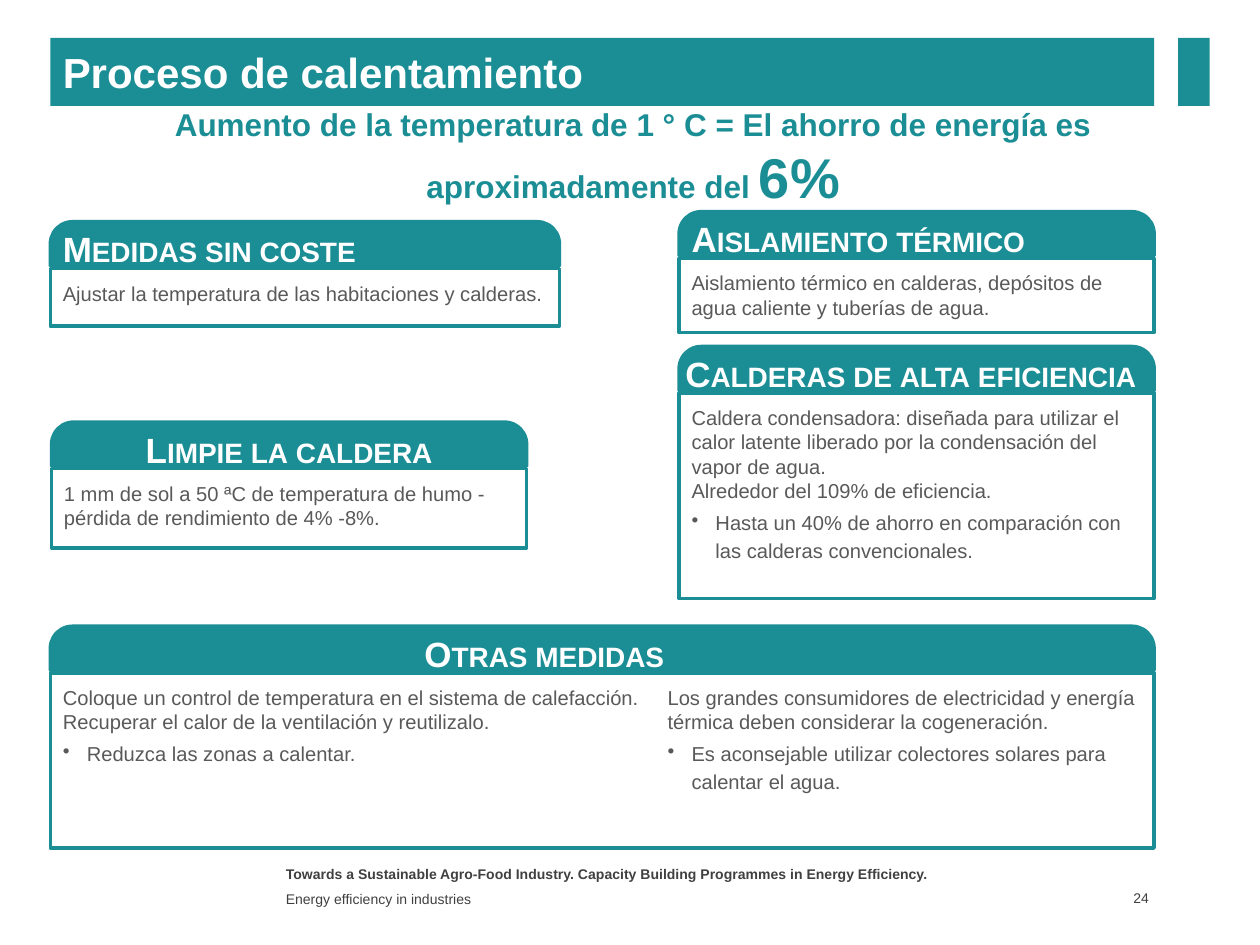
from pptx import Presentation
from pptx.dml.color import RGBColor
from pptx.enum.shapes import MSO_SHAPE
from pptx.enum.text import MSO_ANCHOR, PP_ALIGN
from pptx.oxml.ns import qn
from pptx.util import Inches, Pt

RECTANGLE = MSO_SHAPE.RECTANGLE
ROUND_TOP = MSO_SHAPE.ROUND_2_SAME_RECTANGLE
TOP, MIDDLE = MSO_ANCHOR.TOP, MSO_ANCHOR.MIDDLE
LEFT, CENTER, RIGHT = PP_ALIGN.LEFT, PP_ALIGN.CENTER, PP_ALIGN.RIGHT

TEAL, WHITE, GREY, DARK = "1B8E95", "FFFFFF", "595959", "404040"
HEADER_HEIGHT = 0.35
BODY_OFFSET = 0.37
TEXT_OFFSET = 0.05
BULLET_INDENT = 0.19

TITLE = {"size": Pt(24), "bold": True, "color": WHITE}
CLAIM = {"size": Pt(18), "bold": True, "color": TEAL}
FIGURE = {"size": Pt(32), "bold": True, "color": TEAL}
HEADING = {"size": Pt(20), "bold": True, "color": WHITE}
BODY = {"size": Pt(11.5), "color": GREY}
FOOTER = {"size": Pt(8), "color": DARK}
FOOTER_BOLD = {**FOOTER, "bold": True}


def rgb(value):
    return RGBColor.from_string(value)


class SlideBuilder:
    def __init__(self, slide, font_name="Arial"):
        self.slide = slide
        self.font_name = font_name

    def run(self, paragraph, text, style, small_caps=False):
        run = paragraph.add_run()
        run.text = text
        run.font.name = self.font_name
        for name, value in style.items():
            if name == "color":
                run.font.color.rgb = rgb(value)
            else:
                setattr(run.font, name, value)
        if small_caps:
            run.font._element.set("cap", "small")

    def shape(self, kind, box, fill=None, line=None):
        shape = self.slide.shapes.add_shape(kind, *map(Inches, box))
        shape.shadow.inherit = False
        if fill:
            shape.fill.solid()
            shape.fill.fore_color.rgb = rgb(fill)
        else:
            shape.fill.background()
        if line:
            shape.line.color.rgb = rgb(line)
            shape.line.width = Pt(2)
        else:
            shape.line.fill.background()
        return shape

    def text(self, box, runs, anchor=TOP, align=LEFT, small_caps=False):
        shape = self.slide.shapes.add_textbox(*map(Inches, box))
        frame = shape.text_frame
        frame.word_wrap = True
        frame.vertical_anchor = anchor
        paragraph = frame.paragraphs[0]
        paragraph.alignment = align
        for text, style in runs:
            self.run(paragraph, text, style, small_caps)
        return frame

    def bullet(self, frame, text):
        paragraph = frame.add_paragraph()
        properties = paragraph._p.get_or_add_pPr()
        properties.set("marL", str(Inches(BULLET_INDENT)))
        properties.set("indent", str(-Inches(BULLET_INDENT)))
        mark = properties.makeelement(qn("a:buChar"), {"char": "•"})
        properties.append(mark)
        paragraph.line_spacing = Pt(16)
        paragraph.space_before = Pt(2.3)
        self.run(paragraph, text, BODY)

    def body(self, box, lines, bullets=()):
        """Plain paragraphs followed by bulleted ones."""
        frame = self.text(box, [(lines[0], BODY)])
        for line in lines[1:]:
            self.run(frame.add_paragraph(), line, BODY)
        for item in bullets:
            self.bullet(frame, item)

    def card(self, box, heading, heading_left, heading_width, columns, align=LEFT):
        """Framed panel with a rounded header; each column is left, width, lines, bullets."""
        left, top, width, body_height = box
        body_top = top + BODY_OFFSET
        self.shape(RECTANGLE, (left, body_top, width, body_height), line=TEAL)
        header = self.shape(ROUND_TOP, (left, top, width, HEADER_HEIGHT), TEAL, TEAL)
        header.adjustments[0] = 0.5
        self.text((heading_left, top, heading_width, 0.44), [(heading, HEADING)],
                  align=align, small_caps=True)
        for column_left, column_width, lines, bullets in columns:
            self.body((column_left, body_top + TEXT_OFFSET, column_width,
                       body_height - TEXT_OFFSET), lines, bullets)


def main():
    presentation = Presentation()
    presentation.slide_width, presentation.slide_height = Inches(10), Inches(7.5)
    builder = SlideBuilder(presentation.slides.add_slide(presentation.slide_layouts[6]))

    builder.text((2.17, 6.82, 5.5, 0.21), [(
        "Towards a Sustainable Agro-Food Industry. "
        "Capacity Building Programmes in Energy Efficiency.", FOOTER_BOLD)])
    builder.text((2.17, 7.04, 5.5, 0.19),
                 [("Energy efficiency in industries", FOOTER)], MIDDLE)
    number = builder.text((8.6, 7.03, 0.56, 0.2), [("24", FOOTER)], MIDDLE, RIGHT)
    number.margin_right = Inches(0.04)

    builder.text((0.4, 0.78, 9.25, 0.94), [
        ("Aumento de la temperatura de 1 ° C = El ahorro de energía es "
         "aproximadamente del ", CLAIM), ("6%", FIGURE)], MIDDLE, CENTER)
    banner = builder.shape(RECTANGLE, (0.4, 0.3, 8.76, 0.54), TEAL)
    banner.text_frame.vertical_anchor = MIDDLE
    title = banner.text_frame.paragraphs[0]
    title.alignment = LEFT
    builder.run(title, "Proceso de calentamiento", TITLE)
    builder.shape(RECTANGLE, (9.35, 0.3, 0.25, 0.54), TEAL)

    builder.card((0.4, 1.76, 4.04, 0.46), "Medidas sin coste", 0.4, 3.97, [
        (0.4, 4.04, ["Ajustar la temperatura de las habitaciones y calderas."], [])])
    builder.card((5.39, 1.68, 3.77, 0.59), "Aislamiento térmico", 5.39, 3.77, [
        (5.39, 3.77, ["Aislamiento térmico en calderas, depósitos de agua caliente "
                      "y tuberías de agua."], [])])
    builder.card((0.41, 3.35, 3.77, 0.63), "Limpie la caldera", 0.41, 3.77, [
        (0.41, 3.77, ["1 mm de sol a 50 ªC de temperatura de humo - "
                      "pérdida de rendimiento de 4% -8%."], [])], CENTER)
    builder.card((0.4, 4.97, 8.76, 1.39), "Otras medidas", 3.27, 3.77, [
        (0.4, 4.79, ["Coloque un control de temperatura en el sistema de calefacción.",
                     "Recuperar el calor de la ventilación y reutilizalo."],
         ["Reduzca las zonas a calentar."]),
        (5.2, 3.91, ["Los grandes consumidores de electricidad y energía térmica "
                     "deben considerar la cogeneración."],
         ["Es aconsejable utilizar colectores solares para calentar el agua."])])
    builder.card((5.39, 2.75, 3.77, 1.63), "Calderas de alta eficiencia", 5.34, 3.82, [
        (5.39, 3.77, ["Caldera condensadora: diseñada para utilizar el calor latente "
                      "liberado por la condensación del vapor de agua.",
                      "Alrededor del 109% de eficiencia."],
         ["Hasta un 40% de ahorro en comparación con las calderas convencionales."])])

    presentation.save("out.pptx")


if __name__ == "__main__":
    main()
